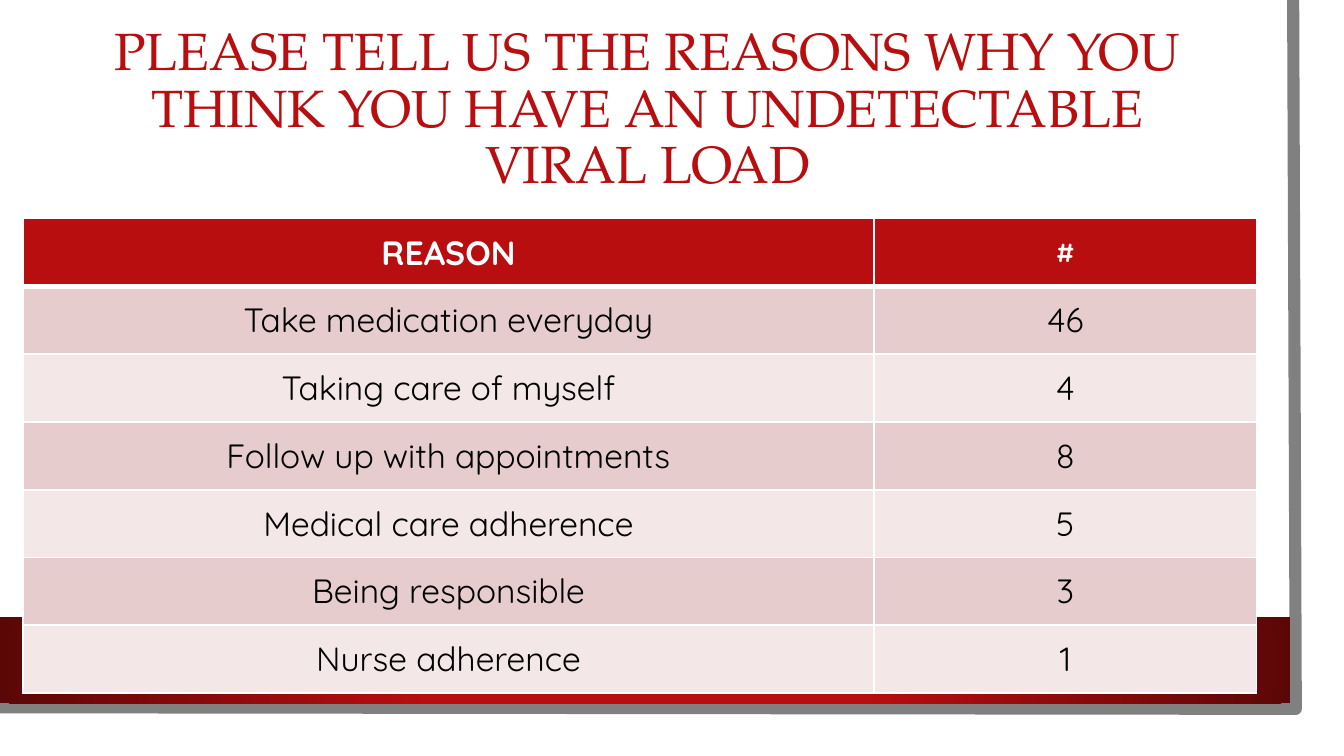
from dataclasses import dataclass

from lxml import etree
from pptx import Presentation
from pptx.dml.color import RGBColor as Rgb
from pptx.enum.shapes import MSO_SHAPE as Shape
from pptx.enum.text import MSO_ANCHOR as Anchor, PP_ALIGN as Align
from pptx.oxml import parse_xml
from pptx.oxml.ns import nsdecls, qn
from pptx.util import Cm, Pt


@dataclass(frozen=True)
class Theme:
    red: str = "B80E0F"
    dark: str = "5C0707"
    gray: str = "808080"
    white: str = "FFFFFF"
    black: str = "000000"
    bands: tuple = ("E6CCCC", "F3E7E7")
    serif: str = "TeX Gyre Pagella"
    sans: str = "Quicksand"
    title: int = 28
    body: int = 18
    small: int = 14
    rule: float = 6.5
    thin: int = 1
    thick: int = 3


THEME = Theme()
TITLE = "PLEASE TELL US THE REASONS WHY YOU THINK YOU HAVE AN UNDETECTABLE VIRAL LOAD"
ROWS = [
    ("REASON", "#"),
    ("Take medication everyday", "46"),
    ("Taking care of myself", "4"),
    ("Follow up with appointments", "8"),
    ("Medical care adherence", "5"),
    ("Being responsible", "3"),
    ("Nurse adherence", "1"),
]


def style(para, font, size, color, bold=False):
    para.alignment = Align.CENTER
    para.font.name = font
    para.font.size = Pt(size)
    para.font.bold = bold
    para.font.color.rgb = Rgb.from_string(color)


def add_rect(slide, left, top, width, height):
    rect = slide.shapes.add_shape(
        Shape.RECTANGLE, Cm(left), Cm(top), Cm(width), Cm(height))
    rect.shadow.inherit = False
    rect.line.fill.background()
    rect.fill.solid()
    rect.fill.fore_color.rgb = Rgb.from_string(THEME.white)
    return rect


def glow(shape):
    """Fill a shape with red at its centre, fading to dark at the ends."""
    old = shape.element.spPr.find(qn("a:solidFill"))
    stops = "".join(
        f'<a:gs pos="{pos}"><a:srgbClr val="{color}"/></a:gs>'
        for pos, color in ((34000, THEME.red), (100000, THEME.dark)))
    old.getparent().replace(old, parse_xml(
        f'<a:gradFill {nsdecls("a")} rotWithShape="1"><a:gsLst>{stops}</a:gsLst>'
        '<a:path path="circle"><a:fillToRect l="50000" t="50000" r="50000" '
        'b="50000"/></a:path></a:gradFill>'))


def add_frame(slide, left, top, width, height):
    """Draw the white page, its gray edge and the red band at the foot."""
    add_rect(slide, left, top, width, height)

    right, foot = left + width - 0.48, top + height - 0.45
    pen = slide.shapes.build_freeform(Cm(right - 0.05), Cm(top))
    pen.add_line_segments(
        [(Cm(right), Cm(foot)), (Cm(left - 0.05), Cm(foot - 0.03))], close=False)
    edge = pen.convert_to_shape()
    edge.shadow.inherit = False
    edge.fill.background()
    edge.line.color.rgb = Rgb.from_string(THEME.gray)
    edge.line.width = Pt(THEME.rule)

    deep = 1.63
    glow(add_rect(slide, left, foot - 0.1 - deep, width - 0.58, deep))


def add_title(slide, left, top, width, height):
    box = slide.shapes.add_textbox(Cm(left), Cm(top), Cm(width), Cm(height))
    frame = box.text_frame
    frame.word_wrap = True
    frame.vertical_anchor = Anchor.MIDDLE
    para = frame.paragraphs[0]
    para.text = TITLE
    para.line_spacing = 0.9
    style(para, THEME.serif, THEME.title, THEME.red)


def set_edges(cell, foot):
    """Rule a cell in white, with its own width for the bottom line."""
    props = cell._tc.get_or_add_tcPr()
    sides = {"lnL": THEME.thin, "lnR": THEME.thin, "lnT": THEME.thin, "lnB": foot}
    for spot, (tag, width) in enumerate(sides.items()):
        line = etree.Element(qn(f"a:{tag}"), w=str(Pt(width)))
        fill = etree.SubElement(line, qn("a:solidFill"))
        etree.SubElement(fill, qn("a:srgbClr"), val=THEME.white)
        props.insert(spot, line)


def add_reasons(slide, left, top, width, height):
    table = slide.shapes.add_table(
        len(ROWS), 2, Cm(left), Cm(top), Cm(width), Cm(height)).table
    for col, share in zip(table.columns, (0.69, 0.31)):
        col.width = Cm(width * share)
    for row in table.rows:
        row.height = Cm(height / len(ROWS))

    for r, row in enumerate(ROWS):
        head = r == 0
        for c, text in enumerate(row):
            cell = table.cell(r, c)
            cell.vertical_anchor = Anchor.MIDDLE
            cell.fill.solid()
            cell.fill.fore_color.rgb = Rgb.from_string(
                THEME.red if head else THEME.bands[(r - 1) % 2])
            set_edges(cell, THEME.thick if head else THEME.thin)
            para = cell.text_frame.paragraphs[0]
            para.text = text
            style(para, THEME.sans,
                  THEME.small if text == "#" else THEME.body,
                  THEME.white if head else THEME.black, head)


def main():
    deck = Presentation()
    deck.slide_width, deck.slide_height = Cm(25.4), Cm(14.28)
    slide = deck.slides.add_slide(deck.slide_layouts[6])
    add_frame(slide, 0, 0, 24.97, 13.84)
    add_title(slide, 1.4, 0.89, 21.67, 2.39)
    add_reasons(slide, 0.43, 4.13, 23.32, 8.96)
    deck.save("out.pptx")


if __name__ == "__main__":
    main()
